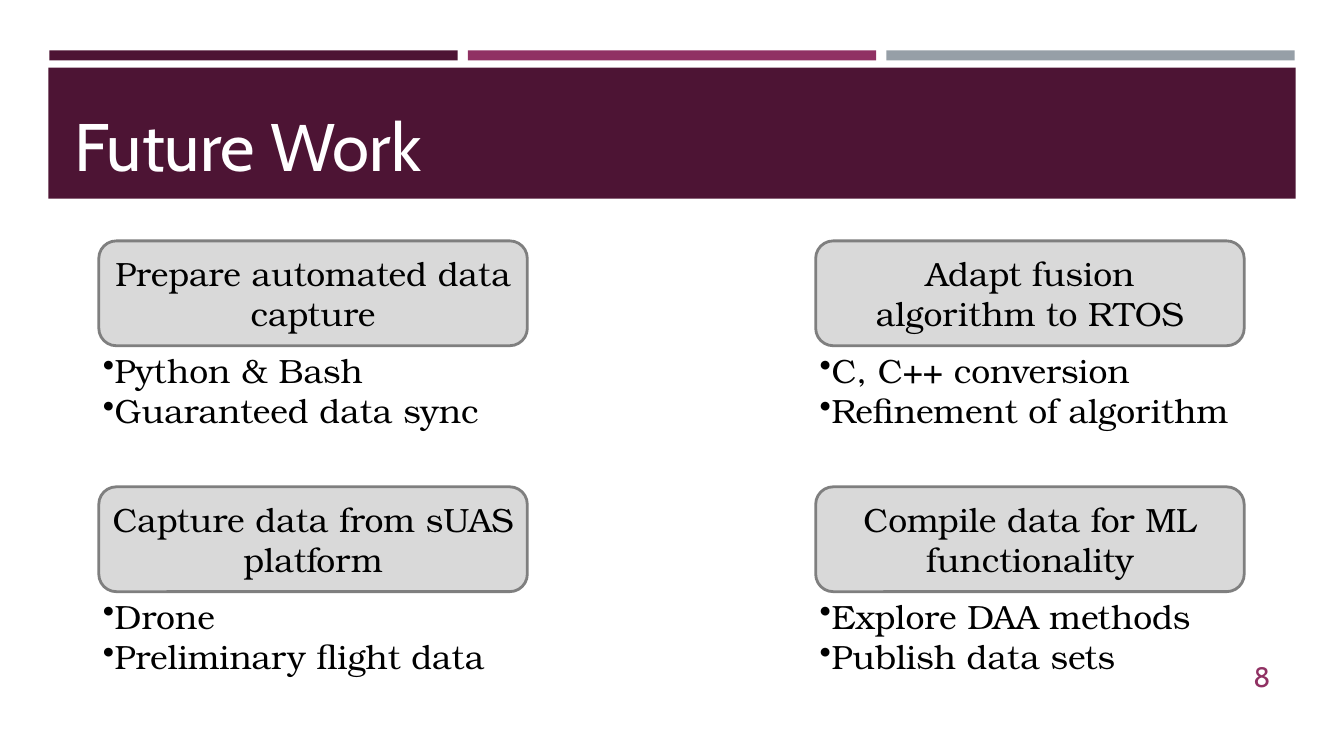
import pptx
import pptx.dml.color
import pptx.enum.shapes
import pptx.enum.text
import pptx.oxml.ns
import pptx.util
from lxml import etree

Inches, Pt = pptx.util.Inches, pptx.util.Pt
SHAPE = pptx.enum.shapes.MSO_SHAPE
ALIGN = pptx.enum.text.PP_ALIGN
ANCHOR = pptx.enum.text.MSO_ANCHOR

PLUM, ROSE, GREY = "4D1434", "903163", "969FA7"
BODY = {"name": "TeX Gyre Bonum", "size": Pt(24)}
TITLE = {"name": "Cabin", "size": Pt(48)}
NUMBER = {"name": "Cabin", "size": Pt(20)}
SNUG = {"margin_" + side: Inches(0.04) for side in ("left", "top", "right", "bottom")}

prs = pptx.Presentation()
prs.slide_width, prs.slide_height = Inches(13.33), Inches(7.5)
s = prs.slides.add_slide(prs.slide_layouts[6])


def add_box(kind, box, fill, line=None):
    sp = s.shapes.add_shape(kind, *map(Inches, box))
    sp.shadow.inherit = False
    sp.fill.solid()
    sp.fill.fore_color.rgb = pptx.dml.color.RGBColor.from_string(fill)
    if line:
        sp.line.color.rgb = pptx.dml.color.RGBColor.from_string(line)
        sp.line.width = Pt(2)
    else:
        sp.line.fill.background()
    return sp


def write(sp, lines, font, color, align=ALIGN.LEFT, bullet=None, **frame):
    """Fill a shape with one paragraph a line; frame holds text frame attributes."""
    tf = sp.text_frame
    for key, value in {"word_wrap": True, **frame}.items():
        setattr(tf, key, value)
    for i, line in enumerate(lines):
        p = tf.paragraphs[0] if i == 0 else tf.add_paragraph()
        p.text, p.alignment = line, align
        for r in p.runs:
            for key, value in font.items():
                setattr(r.font, key, value)
            r.font.color.rgb = pptx.dml.color.RGBColor.from_string(color)
        if bullet:
            pPr = p._p.get_or_add_pPr()
            pPr.set("marL", "0")
            pPr.set("indent", "0")
            etree.SubElement(pPr, pptx.oxml.ns.qn("a:buChar"), char=bullet)


# Header: three bars over a title band
for col, color in enumerate((PLUM, ROSE, GREY)):
    add_box(SHAPE.RECTANGLE, (0.49 + col * 4.15, 0.5, 4.05, 0.1), color)
add_box(SHAPE.RECTANGLE, (0.48, 0.67, 12.37, 1.3), PLUM)
title = s.shapes.add_textbox(*map(Inches, (0.64, 0.77, 12.06, 1.11)))
write(title, ["Future Work"], TITLE, "FFFFFF", vertical_anchor=ANCHOR.BOTTOM)

# Tasks on a two by two grid, each with its bullets below
COLS, ROWS = (0.98, 8.09), (2.39, 4.83)
CARD_W, CARD_H = 4.25, 1.04
tasks = [
    [("Prepare automated data capture", ["Python & Bash", "Guaranteed data sync"]),
     ("Adapt fusion\nalgorithm to RTOS", ["C, C++ conversion", "Refinement of algorithm"])],
    [("Capture data from sUAS platform", ["Drone", "Preliminary flight data"]),
     ("Compile data for ML functionality", ["Explore DAA methods", "Publish data sets"])],
]
for top, row in zip(ROWS, tasks):
    for left, (heading, points) in zip(COLS, row):
        card = add_box(SHAPE.ROUNDED_RECTANGLE, (left, top, CARD_W, CARD_H), "D9D9D9", "7F7F7F")
        write(card, [heading], BODY, "000000", ALIGN.CENTER,
              vertical_anchor=ANCHOR.MIDDLE, **SNUG)
        notes = s.shapes.add_textbox(*map(Inches, (left, top + CARD_H, 5.03, 1.23)))
        write(notes, points, BODY, "000000", bullet="•", **SNUG)

number = s.shapes.add_textbox(*map(Inches, (11.55, 6.51, 1.15, 0.4)))
write(number, ["8"], NUMBER, ROSE, ALIGN.RIGHT, vertical_anchor=ANCHOR.MIDDLE)

prs.save("out.pptx")
